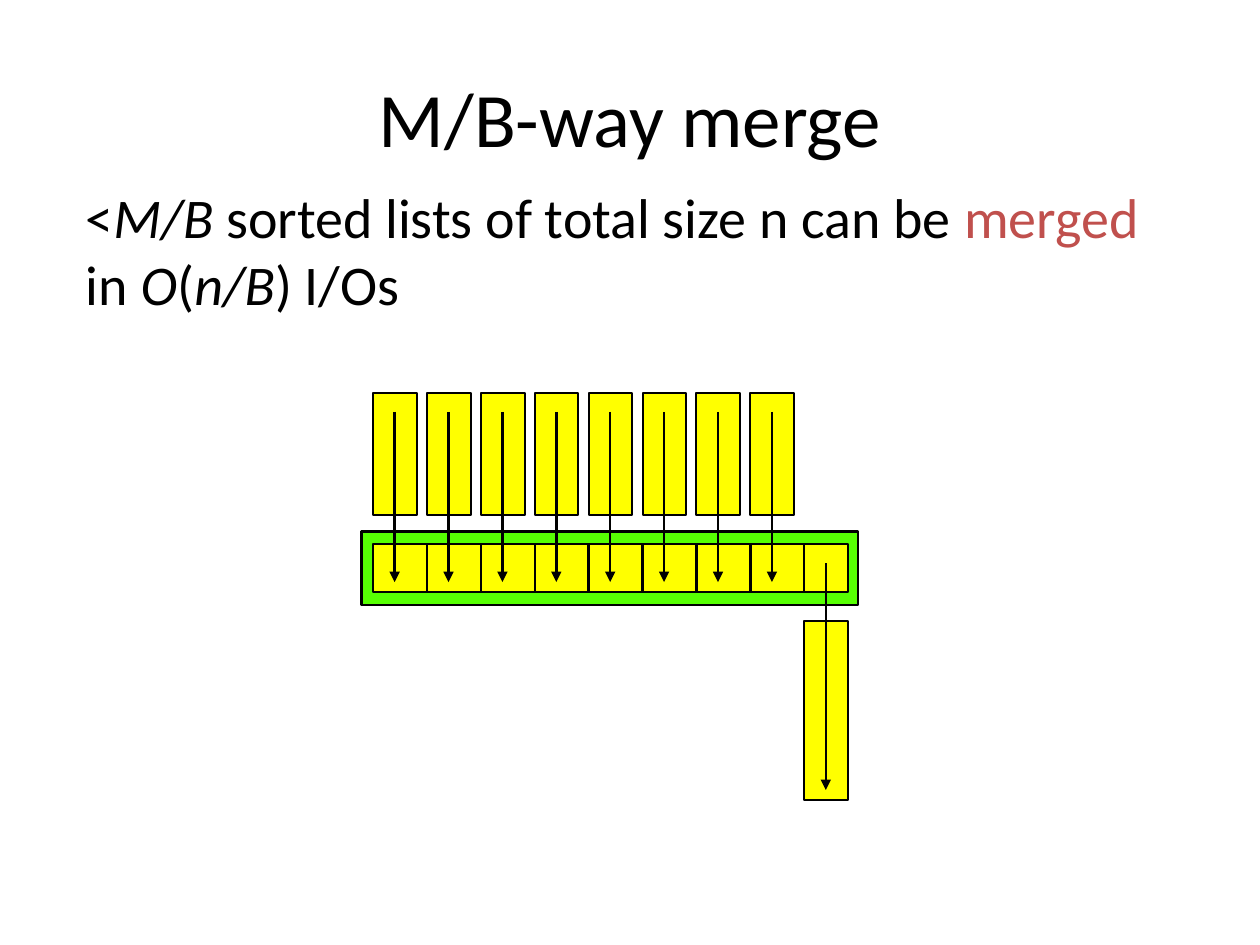
from lxml import etree
from pptx import Presentation
from pptx.dml.color import RGBColor
from pptx.enum.shapes import MSO_CONNECTOR, MSO_SHAPE
from pptx.enum.text import MSO_ANCHOR, PP_ALIGN
from pptx.oxml.ns import qn
from pptx.util import Pt

RECTANGLE = MSO_SHAPE.RECTANGLE
STRAIGHT = MSO_CONNECTOR.STRAIGHT
MIDDLE = MSO_ANCHOR.MIDDLE
CENTER = PP_ALIGN.CENTER
TITLE_ONLY = 5

FONT = "Calibri"
COLORS = {"ink": "000000", "accent": "C0504D", "memory": "57FF03", "block": "FFFF00"}

# Merge diagram, in points
LIST_COUNT = 8
GRID_LEFT = 213.2
PITCH = 30.8
BLOCK_WIDTH = 25
ARROW_OFFSET = 12.3
BUFFER_TOP, BUFFER_HEIGHT = 311, 27.4
THIN, THICK = 1.13, 1.38


def color(name):
    return RGBColor.from_string(COLORS[name])


def add_span(para, text, size, ink="ink", italic=False):
    span = para.add_run()
    span.text = text
    span.font.name = FONT
    span.font.size = Pt(size)
    span.font.italic = italic
    span.font.color.rgb = color(ink)


def set_title(page, text):
    title = page.shapes.title
    title.left, title.top, title.width, title.height = Pt(36), Pt(21.6), Pt(648), Pt(90)
    title.text_frame.vertical_anchor = MIDDLE
    para = title.text_frame.paragraphs[0]
    para.alignment = CENTER
    add_span(para, text, 44)


def add_statement(page, spans):
    box = page.shapes.add_textbox(Pt(41.8), Pt(100.8), Pt(635.8), Pt(187.2))
    box.text_frame.word_wrap = True
    para = box.text_frame.paragraphs[0]
    para.space_before = Pt(6.4)
    for text, ink, italic in spans:
        add_span(para, text, 32, ink, italic)


def add_block(diagram, left, top, width, height, fill="block", weight=THIN):
    block = diagram.shapes.add_shape(RECTANGLE, Pt(left), Pt(top), Pt(width), Pt(height))
    block.shadow.inherit = False
    block.fill.solid()
    block.fill.fore_color.rgb = color(fill)
    block.line.color.rgb = color("ink")
    block.line.width = Pt(weight)


def add_vertical(diagram, x, top, bottom, arrow=False):
    line = diagram.shapes.add_connector(STRAIGHT, Pt(x), Pt(top), Pt(x), Pt(bottom))
    line.line.color.rgb = color("ink")
    line.line.width = Pt(THICK)
    if arrow:
        etree.SubElement(line.line._get_or_add_ln(), qn("a:tailEnd"), type="triangle")
    etree.SubElement(line._element.spPr, qn("a:effectLst"))


def add_merge_diagram(page):
    diagram = page.shapes.add_group_shape()
    columns = [GRID_LEFT + PITCH * i for i in range(LIST_COUNT + 1)]
    inputs, output = columns[:-1], columns[-1]

    # Main memory and its row of buffers
    add_block(diagram, 206.6, 303.8, 283.7, 42, "memory", THICK)
    add_block(diagram, GRID_LEFT, BUFFER_TOP, 271.4, BUFFER_HEIGHT)

    # Sorted input lists and the merged output list
    for left in inputs:
        add_block(diagram, left, 224.6, BLOCK_WIDTH, 69.8)
    add_block(diagram, output, 355, BLOCK_WIDTH, 102.2)

    # Buffer dividers
    for x in columns[1:]:
        add_vertical(diagram, x, BUFFER_TOP, BUFFER_TOP + BUFFER_HEIGHT)

    # Data flow into and out of memory
    for left in inputs:
        add_vertical(diagram, left + ARROW_OFFSET, 235.4, 332.6, arrow=True)
    add_vertical(diagram, output + ARROW_OFFSET, 321.8, 451.4, arrow=True)


def main():
    deck = Presentation()
    deck.slide_width, deck.slide_height = Pt(720), Pt(540)
    page = deck.slides.add_slide(deck.slide_layouts[TITLE_ONLY])
    set_title(page, "M/B-way merge")
    add_statement(page, [
        ("<", "ink", False),
        ("M/B", "ink", True),
        (" sorted lists of total size n can be ", "ink", False),
        ("merged", "accent", False),
        (" in ", "ink", False),
        ("O", "ink", True),
        ("(", "ink", False),
        ("n/B", "ink", True),
        (") I/Os", "ink", False),
    ])
    add_merge_diagram(page)
    deck.save("out.pptx")


if __name__ == "__main__":
    main()
